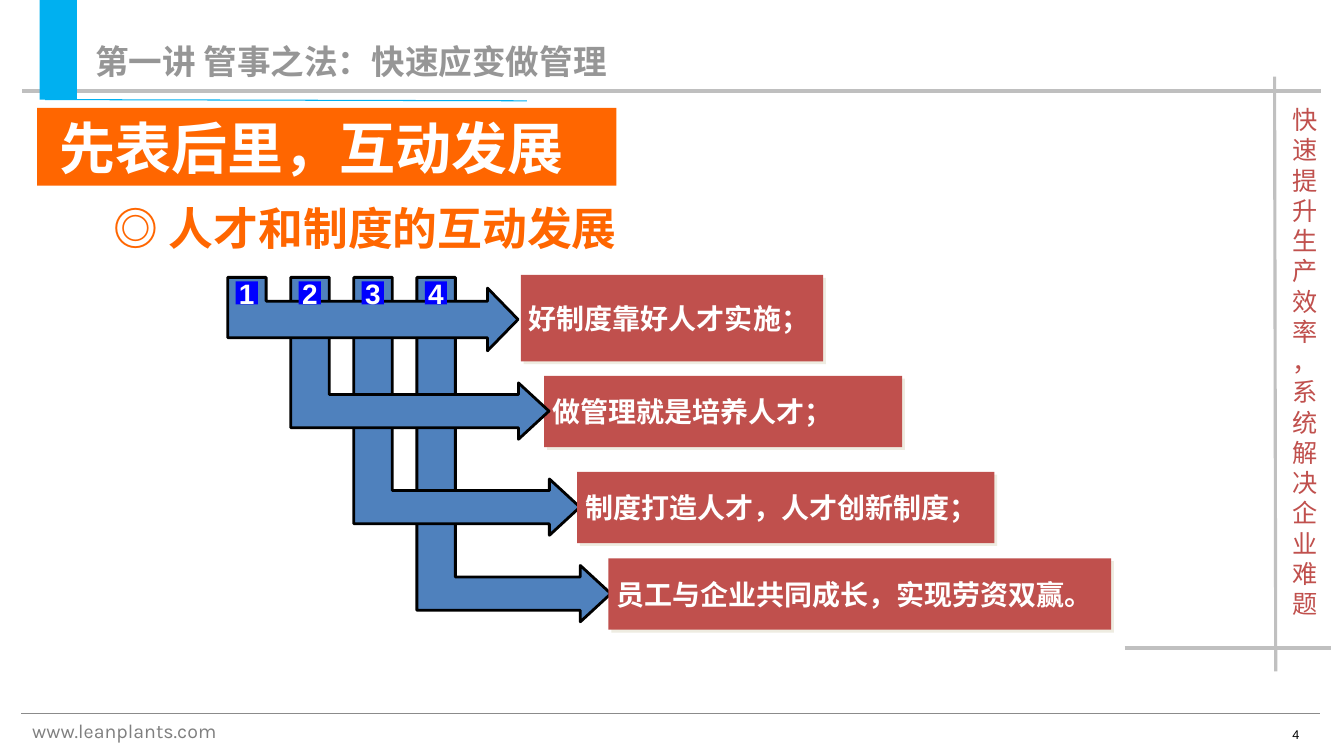
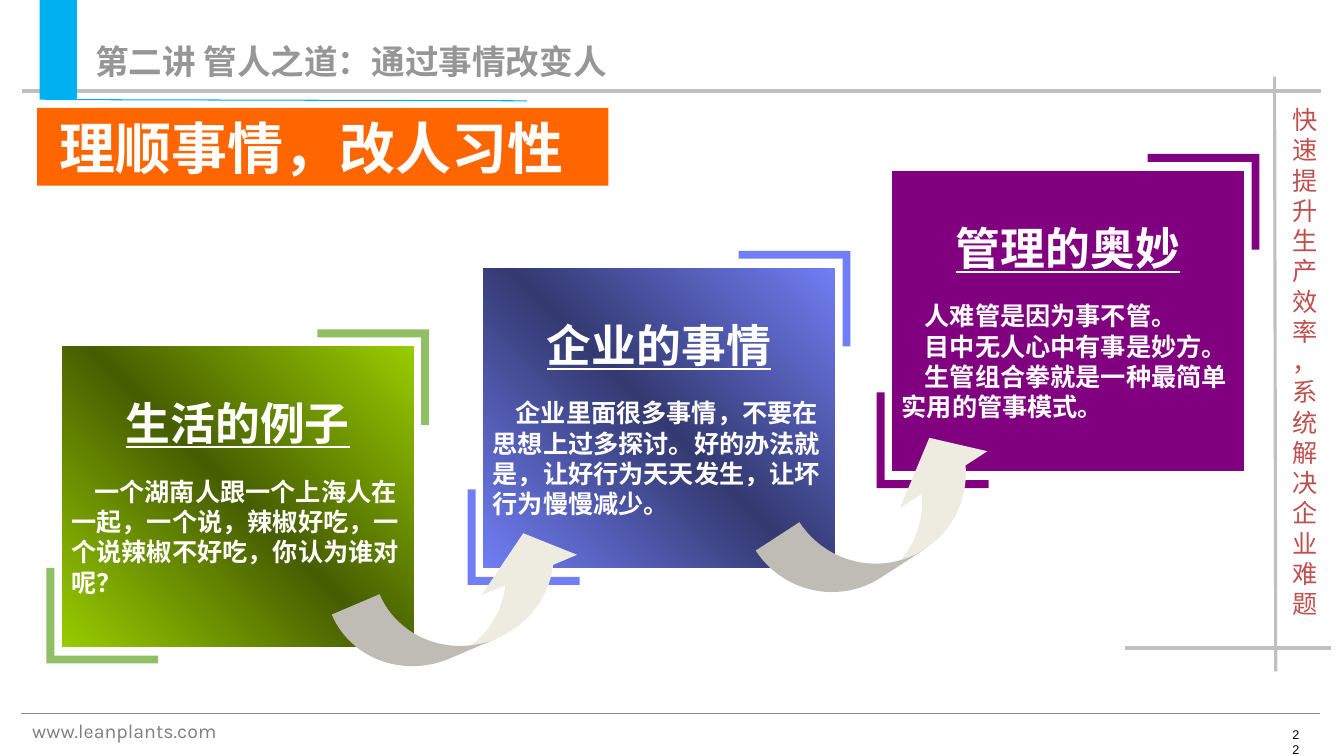
from copy import deepcopy

from pptx import Presentation
from pptx.dml.color import RGBColor
from pptx.enum.shapes import MSO_CONNECTOR, MSO_SHAPE
from pptx.enum.text import MSO_ANCHOR, PP_ALIGN
from pptx.oxml.ns import qn
from pptx.util import Cm, Pt
from lxml.etree import SubElement

COLORS = {
    "white": "FFFFFF", "black": "000000", "accent": "00B0F0", "orange": "FF6600",
    "header": "969696", "rule": "BFBFBF", "side_rule": "C0C0C0",
    "footer_rule": "8B8B8B", "footer": "7F7F7F", "red": "C0504D", "arrow": "4F81BD",
    "number": "0000FF", "cream": "EEECE1", "leaf": "91BF63", "green": "99CC00",
    "dark_green": "475E00", "blue": "717EF5", "dark_blue": "343A71", "purple": "800080",
}
CHINESE = "Noto Sans CJK SC"
# Each style: font values, colour, paragraph values, first-line indent in cm
STYLES = {
    "header": ({"name": CHINESE, "size": Pt(24), "bold": True}, "header", {}, 0),
    "banner": ({"name": CHINESE, "size": Pt(40), "bold": True}, "white", {}, 0),
    "subtitle": ({"name": CHINESE, "size": Pt(32), "bold": True}, "orange", {}, 0),
    "motto": ({"name": CHINESE, "size": Pt(18)}, "red", {}, 0),
    "address": ({"name": "Karla", "size": Pt(14)}, "footer", {}, 0),
    "page": ({"name": "Arial", "size": Pt(9)}, "black", {}, 0),
    "step": ({"name": CHINESE, "size": Pt(20), "bold": True}, "white", {}, 0),
    "number": ({"name": "Arial", "size": Pt(20), "bold": True}, "white",
               {"alignment": PP_ALIGN.CENTER}, 0),
    "card_title": ({"name": CHINESE, "size": Pt(32), "bold": True, "underline": True},
                   "white", {"alignment": PP_ALIGN.CENTER, "space_after": Pt(19)}, 0),
    "card_body": ({"name": CHINESE, "size": Pt(18), "bold": True}, "white", {}, 0.58),
}
MIDDLE = {"vertical_anchor": MSO_ANCHOR.MIDDLE}
NO_MARGINS = {f"margin_{side}": 0 for side in ("left", "right", "top", "bottom")}
MOTTO = "快速提升生产效率，系统解决企业难题"


def set_values(target, values):
    for name, value in values.items():
        setattr(target, name, value)


def rgb(color):
    return RGBColor.from_string(COLORS[color])


class Deck:
    """Holds the presentation, its style and the current slide."""

    def __init__(self):
        self.presentation = Presentation()
        set_values(self.presentation, {"slide_width": Cm(33.88), "slide_height": Cm(19.05)})
        self.slide = None

    def add_slide(self, header, banner, banner_width, page):
        self.slide = self.presentation.slides.add_slide(self.presentation.slide_layouts[6])
        self.line(0.53, 17.98, 33.27, 17.98, "footer_rule", 1)
        self.line(0.56, 2.29, 33.3, 2.29, "rule", 3)
        self.text(0.56, 17.98, 7.92, 0.86, [("www.leanplants.com", "address")])
        self.text(32.33, 18.19, 0.69, 0.64, [(page, "page")])
        self.text(32.33, 2.51, 1, 13.2, [(letter, "motto") for letter in MOTTO])
        self.line(32.13, 1.93, 32.16, 16.92, "side_rule", 2.25)
        self.line(28.35, 16.33, 33.55, 16.33, "side_rule", 2.25)
        self.box(1, 0, 0.94, 2.51, "accent")
        self.line(1.14, 2.51, 13.28, 2.54, "accent", 0.75)
        self.set_text(self.box(0.94, 2.72, banner_width, 1.96, "orange"),
                      [(banner, "banner")], margin_left=Cm(0.57), **MIDDLE)
        self.text(2.15, 0.91, 15.6, 1.27, [(header, "header")])

    def set_text(self, shape, paragraphs, **frame_values):
        frame = shape.text_frame
        set_values(frame, {"word_wrap": True, **frame_values})
        for index, (text, style) in enumerate(paragraphs):
            font_values, color, paragraph_values, indent = STYLES[style]
            paragraph = frame.add_paragraph() if index else frame.paragraphs[0]
            set_values(paragraph, {"alignment": PP_ALIGN.LEFT, **paragraph_values})
            if indent:
                paragraph._p.get_or_add_pPr().set("indent", str(Cm(indent)))
            run = paragraph.add_run()
            run.text = text
            set_values(run.font, font_values)
            run.font.color.rgb = rgb(color)
            east_asian = SubElement(run._r.get_or_add_rPr(), qn("a:ea"))
            east_asian.set("typeface", font_values["name"])

    def text(self, left, top, width, height, paragraphs):
        shape = self.slide.shapes.add_textbox(Cm(left), Cm(top), Cm(width), Cm(height))
        self.set_text(shape, paragraphs)

    def paint(self, shape, fill, line=None, line_width=0.75):
        shape.shadow.inherit = False
        shape.fill.solid()
        shape.fill.fore_color.rgb = rgb(fill)
        if line:
            shape.line.color.rgb = rgb(line)
            shape.line.width = Pt(line_width)
        else:
            shape.line.fill.background()
        return shape

    def box(self, left, top, width, height, fill, line=None, kind=MSO_SHAPE.RECTANGLE):
        shape = self.slide.shapes.add_shape(kind, Cm(left), Cm(top), Cm(width), Cm(height))
        return self.paint(shape, fill, line)

    def line(self, start_x, start_y, end_x, end_y, color, width):
        connector = self.slide.shapes.add_connector(
            MSO_CONNECTOR.STRAIGHT, Cm(start_x), Cm(start_y), Cm(end_x), Cm(end_y))
        connector.line.color.rgb = rgb(color)
        connector.line.width = Pt(width)
        SubElement(connector._element.spPr, qn("a:effectLst"))

    def outline(self, points, fill, line=None, line_width=0.75):
        points = [(Cm(x), Cm(y)) for x, y in points]
        builder = self.slide.shapes.build_freeform(*points[0])
        builder.add_line_segments(points[1:], close=True)
        self.paint(builder.convert_to_shape(), fill, line, line_width)

    def elbow_arrow(self, left, top, tip, middle, half_shaft, half_head):
        """Draw a stem going down that turns right into an arrow."""
        stem, head = left + 0.97, tip - 0.77
        upper, lower = middle - half_shaft, middle + half_shaft
        self.outline([(left, top), (stem, top), (stem, upper), (head, upper),
                      (head, middle - half_head), (tip, middle),
                      (head, middle + half_head), (head, lower), (left, lower)],
                     "arrow", "black", 2)

    def step_box(self, left, top, width, height, text, right_margin):
        shape = self.box(left, top, width, height, "red")
        effects = shape._element.spPr.find(qn("a:effectLst"))
        shadow = SubElement(effects, qn("a:outerShdw"), dist=str(Pt(2.8)), dir="2700000",
                            algn="ctr", rotWithShape="0")
        SubElement(shadow, qn("a:srgbClr"), val=COLORS["cream"])
        self.set_text(shape, [(text, "step")], **{
            **NO_MARGINS, **MIDDLE, "margin_left": Cm(0.2), "margin_right": Cm(right_margin)})

    def corner(self, x, y, direction):
        """Return an L outline; direction 1 opens up and right, -1 down and left."""
        steps = [(0, 0), (2.82, 0), (2.82, 0.2), (0.2, 0.2), (0.2, 2.41), (0, 2.41)]
        return [(x + direction * across, y - direction * up) for across, up in steps]

    def card(self, left, top, title, body, bracket, colors):
        width, height = 8.89, 7.6
        self.outline(self.corner(left - 0.38, top + height + 0.41, 1), bracket)
        self.outline(self.corner(left + width + 0.38, top - 0.41, -1), bracket)
        shape = self.box(left, top, width, height, colors[0], "white")
        if len(colors) > 1:
            self.gradient(shape, colors)
        self.set_text(shape, [(title, "card_title")] + [(text, "card_body") for text in body],
                      **MIDDLE)

    def gradient(self, shape, colors):
        """Fill diagonally from the first colour to the second and back."""
        shape.fill.gradient()
        shape.fill.gradient_angle = 45
        stops = shape._element.spPr.find(".//" + qn("a:gsLst"))
        stops.append(deepcopy(stops[0]))
        for stop, position, color in zip(shape.fill.gradient_stops, (0, 0.5, 1),
                                         (colors[0], colors[1], colors[0])):
            stop.position = position
            stop.color.rgb = rgb(color)

    def curved_arrow(self, left, top, width, height, rotation, adjustments):
        shape = self.box(left, top, width, height, "cream", kind=MSO_SHAPE.CURVED_UP_ARROW)
        shape.rotation = rotation
        for index, value in enumerate(adjustments):
            shape.adjustments[index] = value


def build_interaction_slide(deck):
    deck.add_slide("第一讲 管事之法：快速应变做管理", "先表后里，互动发展", 14.6, "4")
    deck.text(2.62, 4.93, 15.3, 1.6, [("◎ 人才和制度的互动发展", "subtitle")])
    steps = [
        (13.13, 6.93, 7.62, 2.18, "好制度靠好人才实施；", 0.2),
        (13.72, 9.47, 9.02, 1.8, "做管理就是培养人才；", 0.2),
        (14.55, 11.89, 10.52, 1.8, "制度打造人才，人才创新制度；", 0.6),
        (15.34, 14.07, 12.67, 1.8, "员工与企业共同成长，实现劳资双赢。", 0.2),
    ]
    arrows = [(8.05, 0.46, 0.79), (10.36, 0.42, 0.71),
              (12.78, 0.42, 0.71), (14.96, 0.42, 0.71)]
    first_left, pitch = 5.74, 1.59
    for step in steps[:2]:
        deck.step_box(*step)
    for index, arrow in reversed(list(enumerate(arrows))):
        deck.elbow_arrow(first_left + pitch * index, 6.99, 13.06 + 0.78 * index, *arrow)
    for index in range(len(arrows)):
        shape = deck.box(first_left + 0.2 + pitch * index, 7.09, 0.56, 0.58, "number")
        deck.set_text(shape, [(str(index + 1), "number")], **NO_MARGINS, **MIDDLE)
    for step in steps[2:]:
        deck.step_box(*step)


def build_habits_slide(deck):
    deck.add_slide("第二讲 管人之道：通过事情改变人", "理顺事情，改人习性", 14.4, "22")
    deck.card(1.55, 8.71, "生活的例子",
              ["一个湖南人跟一个上海人在一起，一个说，辣椒好吃，一个说辣椒不好吃，你认为谁对呢？"],
              "leaf", ["green", "dark_green"])
    deck.card(12.17, 6.73, "企业的事情",
              ["企业里面很多事情，不要在思想上过多探讨。好的办法就是，让好行为天天发生，让坏行为慢慢减少。"],
              "blue", ["blue", "dark_blue"])
    deck.card(22.48, 4.29, "管理的奥妙",
              ["人难管是因为事不管。", "目中无人心中有事是妙方。",
               "生管组合拳就是一种最简单实用的管事模式。"],
              "purple", ["purple"])
    deck.curved_arrow(19.15, 11.91, 6.53, 2.29, 327, (0.573, 1.146, 0.472))
    deck.curved_arrow(8.53, 14.12, 6.55, 2.18, 337, (0.6, 1.199, 0.472))


def main():
    deck = Deck()
    build_interaction_slide(deck)
    build_habits_slide(deck)
    deck.presentation.save("out.pptx")


if __name__ == "__main__":
    main()
